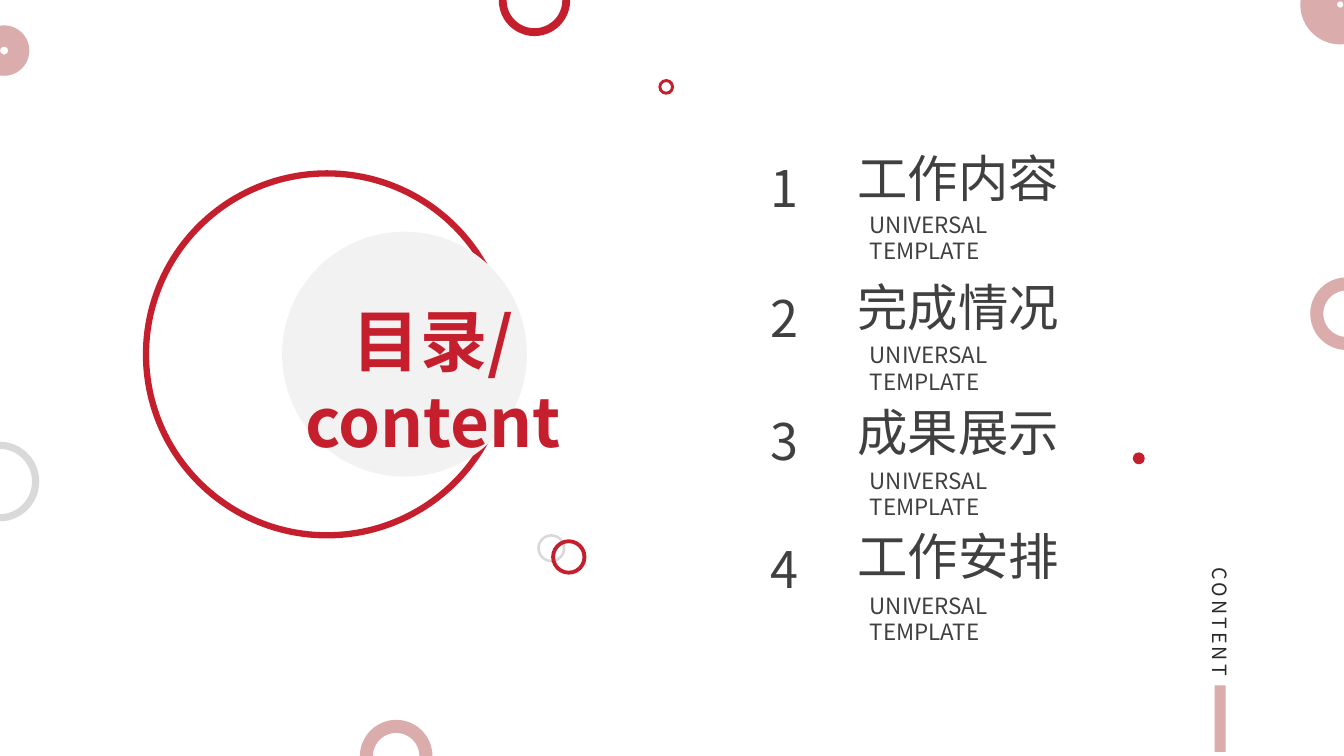
import pptx
import pptx.dml.color
import pptx.enum.shapes
import pptx.enum.text
import pptx.oxml.ns
import pptx.util
from lxml import etree
from pptx.util import Cm

COLORS = {"red": "C51F2D", "pink": "DAACAB", "grey": "D9D9D9", "pale": "F2F2F2",
          "text": "404040", "label": "292929"}
FONT = "Noto Sans CJK SC"
SHAPES = pptx.enum.shapes.MSO_SHAPE
ALIGN = pptx.enum.text.PP_ALIGN
FRAME = {"word_wrap": True,
         "auto_size": pptx.enum.text.MSO_AUTO_SIZE.SHAPE_TO_FIT_TEXT,
         "vertical_anchor": pptx.enum.text.MSO_ANCHOR.TOP,
         "margin_left": Cm(0.25), "margin_right": Cm(0.25),
         "margin_top": Cm(0.13), "margin_bottom": Cm(0.13)}
TIGHT = {"margin_left": Cm(0.18), "margin_right": Cm(0.18),
         "margin_top": Cm(0.1), "margin_bottom": Cm(0.1)}

SUBTITLE = "UNIVERSAL TEMPLATE"
AGENDA = [
    ("1", "工作内容", 3.84, 3.58, 5.18),
    ("2", "完成情况", 7.11, 6.83, 8.46),
    ("3", "成果展示", 10.21, 9.98, 11.63),
    ("4", "工作安排", 13.44, 13.11, 14.78),
]
RINGS = [
    (-1.02, 11.13, 2.01, 0.09, "grey"),
    (13.54, 13.46, 0.71, 0.09, "grey"),
    (13.89, 13.59, 0.89, 0.11, "red"),
    (9.07, 18.14, 1.83, 0.18, "pink"),
    (-0.53, 0.64, 1.27, 0.42, "pink"),
    (12.57, -0.89, 1.8, 0.11, "red"),
    (33.02, 6.99, 1.83, 0.18, "pink"),
    (32.77, -0.89, 2.01, 0.46, "pink"),
]


def rgb(name):
    """Return the named palette colour."""
    return pptx.dml.color.RGBColor.from_string(COLORS[name])


def apply(target, values):
    """Set each attribute in values on target."""
    for name, value in values.items():
        setattr(target, name, value)


def add_figure(s, kind, left, top, width, height, fill=None, line=None, weight=1):
    """Add a flat preset shape with an optional fill and outline."""
    sp = s.shapes.add_shape(kind, Cm(left), Cm(top), Cm(width), Cm(height))
    sp.shadow.inherit = False
    if fill:
        sp.fill.solid()
        sp.fill.fore_color.rgb = rgb(fill)
    else:
        sp.fill.background()
    if line:
        sp.line.color.rgb = rgb(line)
        sp.line.width = pptx.util.Pt(weight)
    else:
        sp.line.fill.background()
    return sp


def add_ring(s, left, top, size, thickness, color, line=None):
    """Add a donut whose thickness is a share of its size."""
    sp = add_figure(s, SHAPES.DONUT, left, top, size, size, color, line)
    sp.adjustments[0] = thickness


def write(sp, text, size, color="text", bold=False, align=ALIGN.LEFT, frame=FRAME):
    """Fill a shape with one formatted paragraph."""
    tf = sp.text_frame
    apply(tf, frame)
    p = tf.paragraphs[0]
    p.alignment = align
    r = p.add_run()
    r.text = text
    apply(r.font, {"name": FONT, "size": pptx.util.Pt(size), "bold": bold})
    r.font.color.rgb = rgb(color)
    etree.SubElement(r.font._element, pptx.oxml.ns.qn("a:ea"), typeface=FONT)
    return r


def add_text(s, left, top, width, height, text, size, **style):
    """Add a text box and return it with its run."""
    sp = s.shapes.add_textbox(Cm(left), Cm(top), Cm(width), Cm(height))
    return sp, write(sp, text, size, **style)


def add_agenda_item(s, number, heading, number_top, heading_top, subtitle_top):
    """Add a numbered heading with its subtitle."""
    add_text(s, 21.36, heading_top, 7.29, 1.8, heading, 36)
    add_text(s, 19.18, number_top, 1.17, 1.8, number, 36)
    add_text(s, 21.67, subtitle_top, 5.49, 0.94, SUBTITLE, 16, align=ALIGN.JUSTIFY)


def add_side_label(s):
    """Add the vertical label and the bar below it."""
    sp, r = add_text(s, 30.25, 14.2, 0.99, 5.11, "CONTENT", 14, color="label",
                     frame={**FRAME, **TIGHT})
    sp.text_frame._txBody.bodyPr.set("vert", "eaVert")
    r.font._element.set("spc", "220")
    add_figure(s, SHAPES.RECTANGLE, 30.61, 17.27, 0.28, 1.68, "pink")


def place_title(s):
    """Move the title placeholder over the discs and fill it."""
    sp = s.shapes.title
    apply(sp, {"left": Cm(5.44), "top": Cm(7.42), "width": Cm(10.95), "height": Cm(2.31)})
    write(sp, "目录/content", 48, "red", True, ALIGN.CENTER)
    s.shapes._spTree.append(sp._element)


def main():
    """Build the contents slide."""
    prs = pptx.Presentation()
    apply(prs, {"slide_width": Cm(33.87), "slide_height": Cm(19.05)})
    s = prs.slides.add_slide(prs.slide_layouts[5])
    add_figure(s, SHAPES.OVAL, 3.68, 4.37, 9.12, 9.12, line="red", weight=4.5)
    for item in AGENDA:
        add_agenda_item(s, *item)
    add_side_label(s)
    for ring in RINGS:
        add_ring(s, *ring)
    add_ring(s, 16.61, 2.01, 0.36, 0.11, "red", line="red")
    add_figure(s, SHAPES.OVAL, 28.55, 11.4, 0.3, 0.3, "red")
    add_figure(s, SHAPES.OVAL, 7.11, 5.84, 6.17, 6.17, "pale")
    place_title(s)
    prs.save("out.pptx")


if __name__ == "__main__":
    main()
